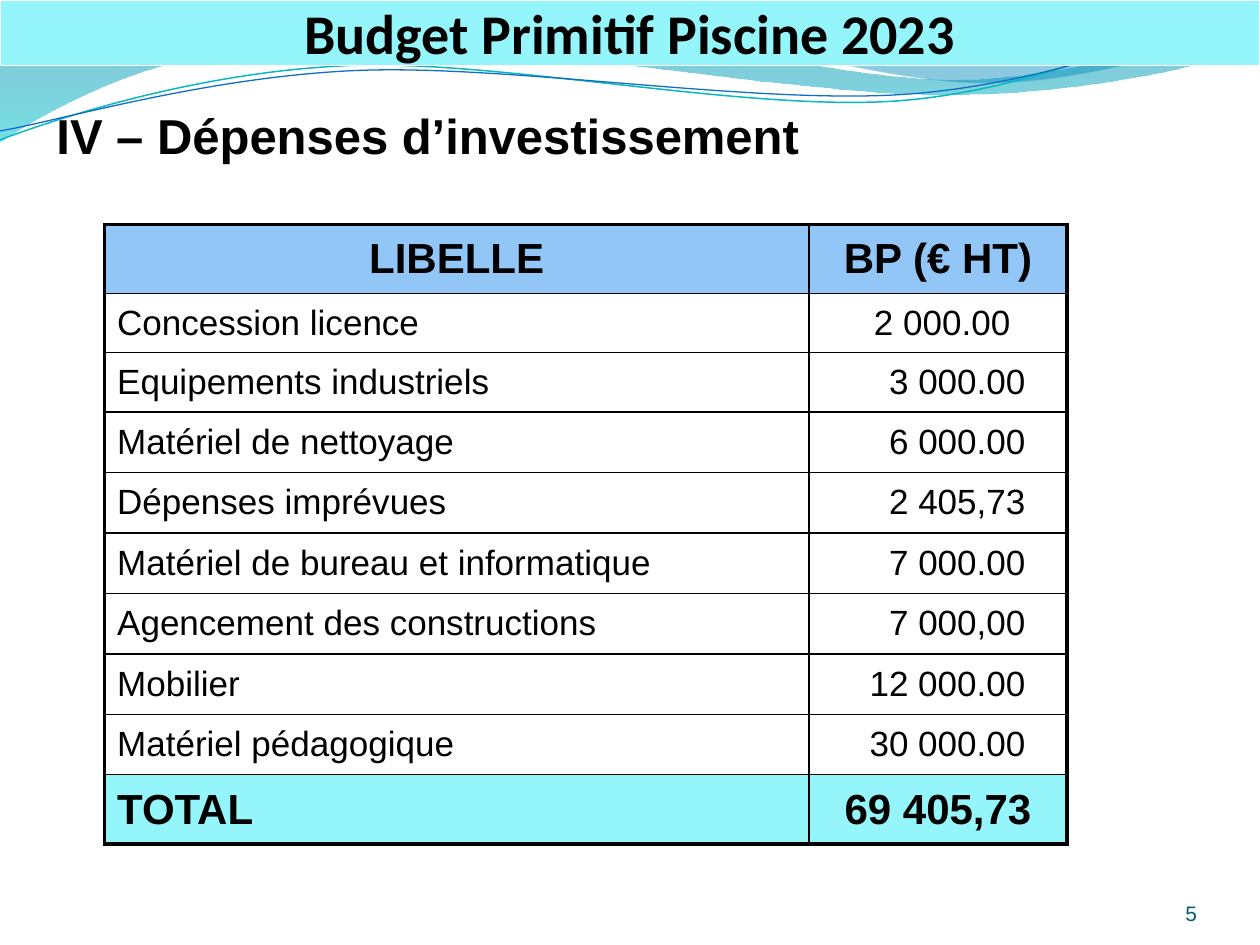
"""Build the pool budget slide with its investment expenses table."""
from math import cos, radians, sin
from lxml.etree import SubElement
from pptx import Presentation
from pptx.dml.color import RGBColor
from pptx.enum.text import MSO_ANCHOR, PP_ALIGN
from pptx.oxml import parse_xml
from pptx.oxml.ns import nsdecls, qn
from pptx.util import Inches, Pt


def rgb(value):
    return RGBColor.from_string(value)


def write(tf, text, align, size, bold=False, color="000000", name="Arial"):
    p = tf.paragraphs[0]
    p.alignment = align
    r = p.add_run()
    r.text = text
    for key, value in {"size": Pt(size), "bold": bold, "name": name}.items():
        setattr(r.font, key, value)
    r.font.color.rgb = rgb(color)


prs = Presentation()
prs.slide_width, prs.slide_height = Inches(10), Inches(7.5)
s = prs.slides.add_slide(prs.slide_layouts[5])

waves = [
    {"start": (0, -0.01),
     "segments": [(4.4, -0.01),
                  (4.76, 0.17, 6.64, 0.63, 7.58, 0.63),
                  (8.53, 0.63, 9.58, 0.26, 10, 0.09),
                  (10.01, 0.36),
                  (9.83, 0.44, 8.7, 0.76, 7.46, 0.75),
                  (6.22, 0.75, 3.82, 0.28, 2.57, 0.34),
                  (1.29, 0.35, 0.46, 0.83, -0.01, 1.13),
                  (0, -0.01)],
     "stops": [(0, "0074A1", 45), (1, "00C6CF", 55)]},
    {"start": (4.79, -0.01),
     "segments": [(5.09, 0.11, 6.82, 0.62, 7.69, 0.65),
                  (8.56, 0.69, 9.61, 0.32, 10, 0.21),
                  (10, 0),
                  (4.79, -0.01)],
     "stops": [(0, "00A1A9", 30), (0.8, "008BBF", 45)]},
    {"start": (0, 1.11),
     "segments": [(0.48, 0.93, 1.58, 0.57, 2.77, 0.52),
                  (3.95, 0.47, 5.93, 0.89, 7.13, 0.8),
                  (8.33, 0.71, 9.38, 0.15, 9.98, -0.02)],
     "line": ("0AB8BF", 0.85), "center": (4.99, 0.58)},
    {"start": (0, 1.04),
     "segments": [(0.47, 0.96, 1.64, 0.61, 2.83, 0.56),
                  (4.03, 0.51, 5.97, 0.83, 7.17, 0.75),
                  (8.36, 0.67, 9.41, 0.21, 10, 0.06)],
     "line": ("0F6FC6", 0.75), "center": (5, 0.59)},
]
TILT = 2.7
for wave in waves:
    points = [wave["start"]]
    for segment in wave["segments"]:
        points += zip(segment[::2], segment[1::2])
    if "center" in wave:
        cx, cy = wave["center"]
        c, d = cos(radians(TILT)), sin(radians(TILT))
        points = [(cx + (x - cx) * c - (y - cy) * d, cy + (x - cx) * d + (y - cy) * c)
                  for x, y in points]
    points = [(Inches(x), Inches(y)) for x, y in points]
    builder = s.shapes.build_freeform(*points[0])
    builder.add_line_segments(points[1:], close="stops" in wave)
    sp = builder.convert_to_shape()
    sp.shadow.inherit = False
    steps = iter(list(sp._element.iter(qn("a:lnTo"))))
    for segment in wave["segments"]:
        step = next(steps)
        if len(segment) == 6:
            bezier = step.makeelement(qn("a:cubicBezTo"))
            step.addprevious(bezier)
            for part in (step, next(steps), next(steps)):
                bezier.append(part[0])
                part.getparent().remove(part)
    if "stops" in wave:
        sp.line.fill.background()
        sp.fill.gradient()
        sp.fill.gradient_angle = 270
        for stop, (position, color, opacity) in zip(sp.fill.gradient_stops, wave["stops"]):
            stop.position = position
            stop.color.rgb = rgb(color)
            clr = stop._gs.find(qn("a:srgbClr"))
            SubElement(clr, qn("a:alpha")).set("val", str(opacity * 1000))
    else:
        color, width = wave["line"]
        sp.rotation = 360 - TILT
        sp.fill.background()
        sp.line.color.rgb = rgb(color)
        sp.line.width = Pt(width)

heading = s.shapes.add_textbox(Inches(0.35), Inches(0.79), Inches(9), Inches(0.71))
heading.text_frame.word_wrap = True
write(heading.text_frame, "IV – Dépenses d’investissement", PP_ALIGN.LEFT, 28, True)

rows = [
    ("LIBELLE", "BP (€ HT)"),
    ("Concession licence", "2 000.00"),
    ("Equipements industriels", "3 000.00"),
    ("Matériel de nettoyage", "6 000.00"),
    ("Dépenses imprévues", "2 405,73"),
    ("Matériel de bureau et informatique", "7 000.00"),
    ("Agencement des constructions", "7 000,00"),
    ("Mobilier", "12 000.00"),
    ("Matériel pédagogique", "30 000.00"),
    ("TOTAL", "69 405,73"),
]
last = len(rows) - 1
row_fills = {0: "91C6F7", last: "94F5FA"}
table = s.shapes.add_table(len(rows), 2, Inches(0.83), Inches(1.78),
                           Inches(7.64), Inches(4.93)).table
for column, width in zip(table.columns, (5.59, 2.05)):
    column.width = Inches(width)
for i, texts in enumerate(rows):
    strong = i in row_fills
    table.rows[i].height = Inches(0.55 if strong else 0.47 if i < 3 else 0.48)
    for j, text in enumerate(texts):
        cell = table.cell(i, j)
        cell.vertical_anchor = MSO_ANCHOR.MIDDLE
        cell.fill.solid()
        cell.fill.fore_color.rgb = rgb(row_fills.get(i, "FFFFFF"))
        align = PP_ALIGN.LEFT
        if i == 0 or (strong and j == 1):
            align = PP_ALIGN.CENTER
        elif j == 1:
            align = PP_ALIGN.RIGHT
            cell.margin_right = Inches(0.45 if i == 1 else 0.33)
        write(cell.text_frame, text, align, 24 if strong else 20, strong)
        outer = {"L": j == 0, "R": j == 1, "T": i == 0, "B": i == last}
        for k, (side, thick) in enumerate(outer.items()):
            border = parse_xml(
                f'<a:ln{side} {nsdecls("a")} w="{Pt(2.25 if thick else 1)}"><a:solidFill>'
                f'<a:srgbClr val="000000"/></a:solidFill></a:ln{side}>')
            cell._tc.get_or_add_tcPr().insert(k, border)

number = s.shapes.add_textbox(Inches(8.67), Inches(6.95), Inches(0.83), Inches(0.4))
tf = number.text_frame
for key in ("margin_left", "margin_top", "margin_right", "margin_bottom"):
    setattr(tf, key, 0)
tf.word_wrap = True
tf.vertical_anchor = MSO_ANCHOR.BOTTOM
write(tf, "5", PP_ALIGN.RIGHT, 12, color="045C75")

title = s.shapes.title
s.shapes._spTree.append(title._element)
for key, value in {"left": 0, "top": 0, "width": 10, "height": 0.52}.items():
    setattr(title, key, Inches(value))
title.fill.solid()
title.fill.fore_color.rgb = rgb("94F5FA")
title.line.color.rgb = rgb("FFFFFF")
title.line.width = Pt(0.75)
tf = title.text_frame
for key, value in {"margin_left": 0, "margin_top": Inches(0.05), "margin_right": 0,
                   "margin_bottom": 0, "vertical_anchor": MSO_ANCHOR.BOTTOM}.items():
    setattr(tf, key, value)
write(tf, "Budget Primitif Piscine 2023", PP_ALIGN.CENTER, 32, True, name="Calibri")

prs.save("out.pptx")
